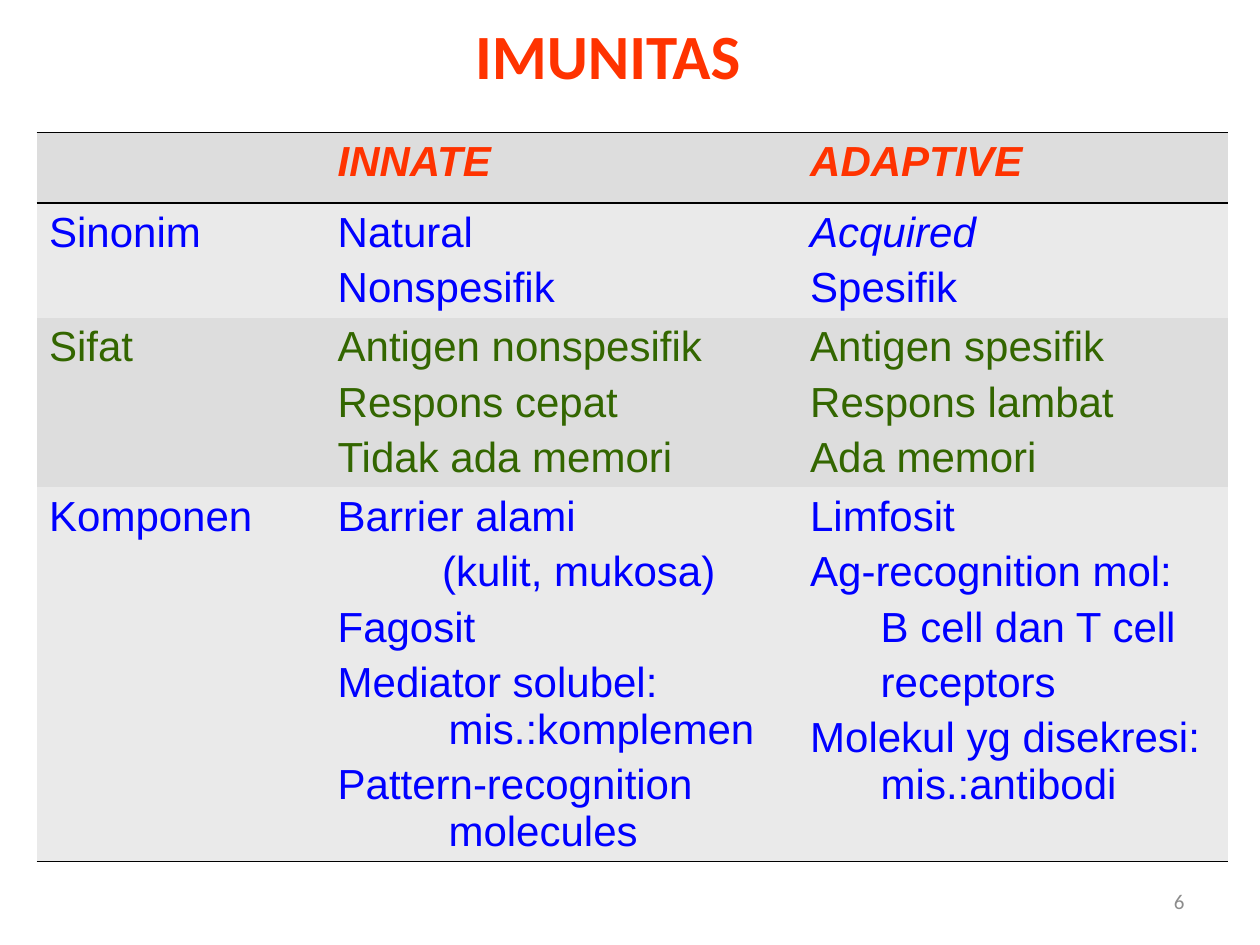
from lxml.etree import SubElement
from pptx import Presentation
from pptx.dml.color import RGBColor
from pptx.enum.text import MSO_ANCHOR, PP_ALIGN
from pptx.oxml.ns import qn
from pptx.util import Inches, Pt

COLORS = {
    "red": "FF3300", "blue": "0000FF", "green": "336600", "gray": "8C8C8C",
    "dark_band": "DDDDDD", "light_band": "EAEAEA", "rule": "000000",
}
COLUMN_WIDTHS = [2.29, 3.75, 3.42]
ROW_HEIGHTS = [0.56, 0.91, 1.34, 2.97]
ROWS = [
    [[], ["INNATE"], ["ADAPTIVE"]],
    [["Sinonim"], ["Natural", "Nonspesifik"], ["Acquired", "Spesifik"]],
    [["Sifat"],
     ["Antigen nonspesifik", "Respons cepat", "Tidak ada memori"],
     ["Antigen spesifik", "Respons lambat", "Ada memori"]],
    [["Komponen"],
     ["Barrier alami", "(kulit, mukosa)", "Fagosit",
      "Mediator solubel: mis.:komplemen", "Pattern-recognition molecules"],
     ["Limfosit", "Ag-recognition mol:", "B cell dan T cell", "receptors",
      "Molekul yg disekresi: mis.:antibodi"]],
]
ROW_COLORS = ["red", "blue", "green", "blue"]
HANGING = {1: 0.88, 2: 0.56}  # component column: hanging indent
SUBLINES = {"(kulit, mukosa)": 0.83, "B cell dan T cell": 0.56, "receptors": 0.56}


def style_font(font, name, size, color, bold=False, italic=False):
    font.name, font.size = name, Pt(size)
    font.bold, font.italic = bold, italic
    font.color.rgb = RGBColor.from_string(COLORS[color])


def place(shape, left, top, width, height):
    shape.left, shape.top = Inches(left), Inches(top)
    shape.width, shape.height = Inches(width), Inches(height)


def set_borders(cell, ruled_sides):
    props = cell._tc.get_or_add_tcPr()
    for side in "LRTB":
        line = SubElement(props, qn(f"a:ln{side}"), w=str(Pt(1)))
        if side in ruled_sides:
            fill = SubElement(line, qn("a:solidFill"))
            SubElement(fill, qn("a:srgbClr"), val=COLORS["rule"])
        else:
            SubElement(line, qn("a:noFill"))


def set_indent(para, left, first=0):
    props = para._p.get_or_add_pPr()
    props.set("marL", str(Inches(left)))
    props.set("indent", str(Inches(first)))


def fill_cell(cell, lines, row, column):
    ruled_sides = {0: "TB", 1: "T", len(ROWS) - 1: "B"}.get(row, "")
    set_borders(cell, ruled_sides)
    band = "light_band" if row % 2 else "dark_band"
    cell.fill.solid()
    cell.fill.fore_color.rgb = RGBColor.from_string(COLORS[band])
    frame = cell.text_frame
    for index, text in enumerate(lines):
        para = frame.add_paragraph() if index else frame.paragraphs[0]
        para.text = text
        if index:
            para.space_before = Pt(4.8)
        if text in SUBLINES:
            set_indent(para, SUBLINES[text])
        elif row == len(ROWS) - 1 and column in HANGING:
            set_indent(para, HANGING[column], -HANGING[column])
        header = row == 0
        style_font(para.font, "Arial", 24, ROW_COLORS[row], bold=header,
                   italic=header or text == "Acquired")


def add_title(page, box):
    title = page.shapes.title
    place(title, *box)
    frame = title.text_frame
    frame.text = "IMUNITAS"
    frame.word_wrap = False
    frame.vertical_anchor = MSO_ANCHOR.TOP
    para = frame.paragraphs[0]
    para.alignment = PP_ALIGN.LEFT
    style_font(para.font, "Calibri", 36, "red", bold=True)


def add_comparison(page, box):
    frame = page.shapes.add_table(len(ROWS), len(COLUMN_WIDTHS),
                                  *[Inches(value) for value in box])
    table = frame.table
    table.first_row = table.horz_banding = False
    for column, width in zip(table.columns, COLUMN_WIDTHS):
        column.width = Inches(width)
    for row, height in zip(table.rows, ROW_HEIGHTS):
        row.height = Inches(height)
    for row, cells in enumerate(ROWS):
        for column, lines in enumerate(cells):
            fill_cell(table.cell(row, column), lines, row, column)


def add_page_number(page, box):
    number = page.shapes.add_textbox(*[Inches(value) for value in box])
    frame = number.text_frame
    frame.word_wrap = True
    frame.vertical_anchor = MSO_ANCHOR.MIDDLE
    para = frame.paragraphs[0]
    para.text = "6"
    para.alignment = PP_ALIGN.RIGHT
    style_font(para.font, "Calibri", 12, "gray")


def main():
    deck = Presentation()
    deck.slide_width, deck.slide_height = Inches(10), Inches(7.5)
    page = deck.slides.add_slide(deck.slide_layouts.get_by_name("Title Only"))
    # Heading
    add_title(page, (3.67, 0.08, 2.62, 0.7))
    # Innate and adaptive immunity side by side
    add_comparison(page, (0.29, 1.05, sum(COLUMN_WIDTHS), sum(ROW_HEIGHTS)))
    # Footer
    add_page_number(page, (7.17, 6.95, 2.33, 0.4))
    deck.save("out.pptx")


if __name__ == "__main__":
    main()
